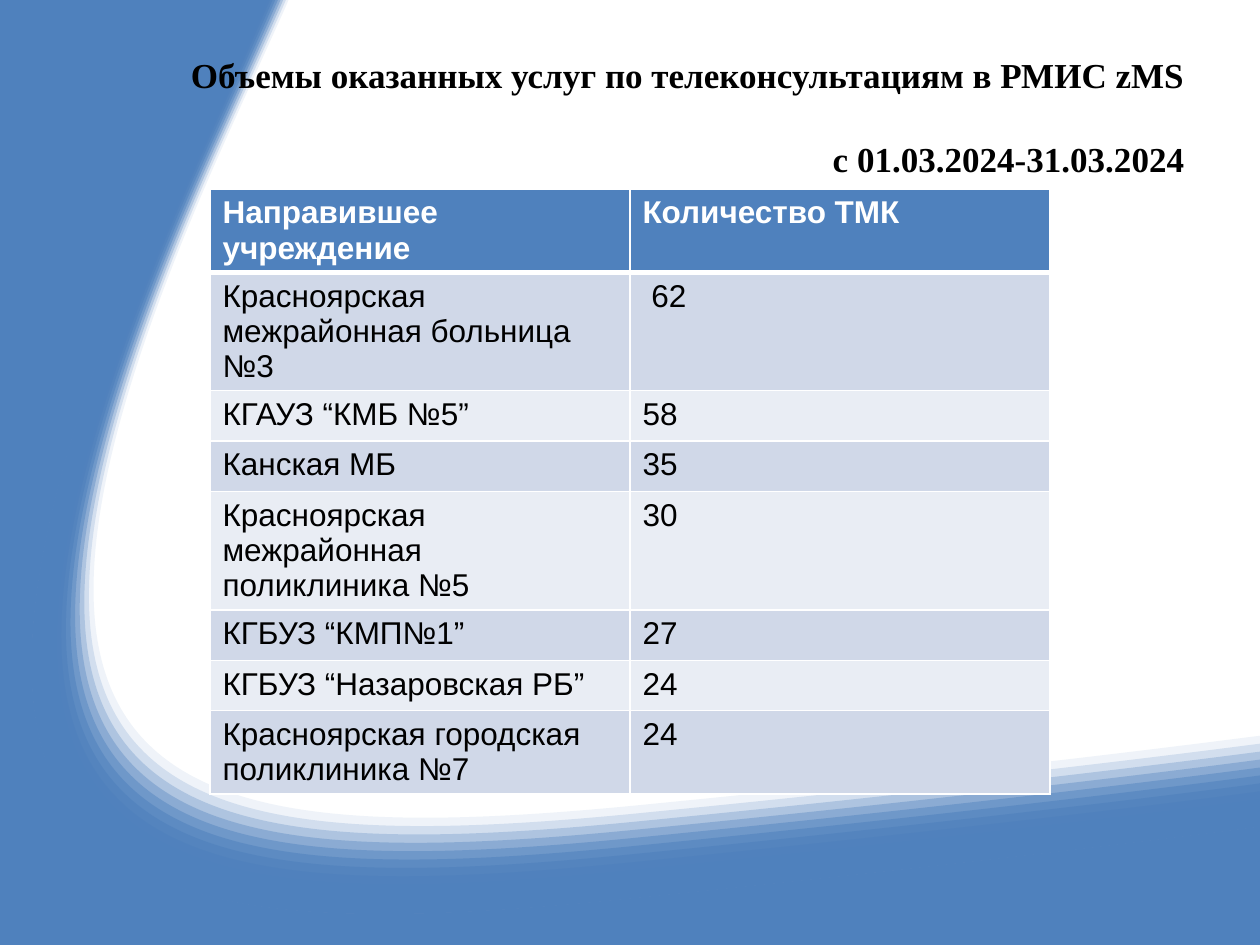
from dataclasses import dataclass
from lxml import etree
from pptx import Presentation
from pptx.dml.color import RGBColor
from pptx.enum.text import MSO_ANCHOR, PP_ALIGN
from pptx.oxml.ns import qn
from pptx.util import Pt


@dataclass(frozen=True)
class Theme:
    blue: str = "4F81BD"
    white: str = "FFFFFF"
    black: str = "000000"
    stripes: tuple = ("D0D8E8", "E9EDF4")
    title_font: str = "Times New Roman"
    body_font: str = "Arial"
    title_size: int = 20
    body_size: int = 18


WIDTH, HEIGHT = 720, 540
CORNERS = [(10, 7.5), (0, 7.5), (0, 0)]


def blend(outer, inner, share):
    return [tuple(a + (b - a) * share for a, b in zip(p, q))
            for p, q in zip(outer, inner)]


def add_step(path, tag, points):
    step = etree.SubElement(path, qn("a:" + tag))
    for x, y in points:
        etree.SubElement(step, qn("a:pt"), x=str(Pt(x * 72)), y=str(Pt(y * 72)))


def add_curves(path, edge):
    for start in range(1, len(edge), 3):
        add_step(path, "cubicBezTo", edge[start:start + 3])


class SlideBuilder:
    def __init__(self, slide, theme):
        self.slide, self.theme = slide, theme

    def style_text(self, paragraph, font, size, color, bold):
        for name, value in {"name": font, "size": Pt(size), "bold": bold}.items():
            setattr(paragraph.font, name, value)
        paragraph.font.color.rgb = RGBColor.from_string(color)

    def area(self, edge, inner_edge=None, opacity=1.0):
        """Blue area from a curved edge to an inner edge or the slide corners."""
        builder = self.slide.shapes.build_freeform(0, 0)
        builder.add_line_segments(
            [(Pt(WIDTH), 0), (Pt(WIDTH), Pt(HEIGHT)), (0, Pt(HEIGHT))], close=True)
        shape = builder.convert_to_shape()
        # Curved outline within the slide frame
        path = shape._element.spPr.find(".//" + qn("a:path"))
        for step in list(path):
            path.remove(step)
        add_step(path, "moveTo", edge[:1])
        add_curves(path, edge)
        for point in inner_edge[:1] if inner_edge else CORNERS:
            add_step(path, "lnTo", [point])
        if inner_edge:
            add_curves(path, inner_edge)
        etree.SubElement(path, qn("a:close"))

        shape.shadow.inherit = False
        shape.fill.solid()
        shape.fill.fore_color.rgb = RGBColor.from_string(self.theme.blue)
        shape.line.fill.background()
        if opacity < 1:
            color = shape._element.spPr.find(".//" + qn("a:srgbClr"))
            etree.SubElement(color, qn("a:alpha"), val=str(round(opacity * 100) * 1000))

    def title(self, lines, left, top, width, height, gap):
        heading = self.slide.shapes.title
        # Bring the title in front of the background
        self.slide.shapes._spTree.append(heading._element)
        place = {"left": left, "top": top, "width": width, "height": height}
        for name, value in place.items():
            setattr(heading, name, Pt(value))
        frame = heading.text_frame
        frame.word_wrap = True
        frame.vertical_anchor = MSO_ANCHOR.MIDDLE
        frame.text = "\n".join(lines)
        for index, paragraph in enumerate(frame.paragraphs):
            paragraph.alignment = PP_ALIGN.RIGHT
            paragraph.space_before = Pt(gap if index else 0)
            self.style_text(paragraph, self.theme.title_font, self.theme.title_size,
                            self.theme.black, True)

    def borders(self, cell, widths):
        properties = cell._tc.get_or_add_tcPr()
        for side, width in widths.items():
            line = etree.SubElement(properties, qn("a:ln" + side), w=str(Pt(width)))
            fill = etree.SubElement(line, qn("a:solidFill"))
            etree.SubElement(fill, qn("a:srgbClr"), val=self.theme.white)

    def table(self, rows, left, top, width, row_height):
        theme = self.theme
        grid = self.slide.shapes.add_table(
            len(rows), len(rows[0]), Pt(left), Pt(top), Pt(width),
            Pt(row_height * len(rows))).table
        for r, values in enumerate(rows):
            header = r == 0
            fill = theme.blue if header else theme.stripes[(r - 1) % 2]
            for c, value in enumerate(values):
                cell = grid.cell(r, c)
                self.borders(cell, {"L": 1, "R": 1, "T": 3 if r == 1 else 1,
                                    "B": 3 if header else 1})
                cell.fill.solid()
                cell.fill.fore_color.rgb = RGBColor.from_string(fill)
                cell.text = value
                self.style_text(cell.text_frame.paragraphs[0], theme.body_font,
                                theme.body_size,
                                theme.white if header else theme.black, header)


# Edge of the solid blue, from the top to the right side
BLUE_EDGE = [(1.99, 0), (1.99, 0), (1.8, 0.41), (1.47, 1.15), (-1.21, 7.12),
             (0.8, 7.55), (4.91, 7.14), (8.06, 6.82), (10, 6.56), (10, 6.56)]
# Edges of the palest and the deepest band, from the right side to the top
PALE_EDGE = [(10, 5.84), (9.98, 5.84), (8.14, 6.09), (5.18, 6.38), (1.21, 6.78),
             (-0.55, 6.32), (1.8, 1.09), (2.11, 0.4), (2.29, 0.01), (2.29, 0)]
DEEP_EDGE = [(10, 6.47), (9.74, 6.51), (7.86, 6.75), (4.98, 7.04), (0.92, 7.45),
             (-1.07, 7.03), (1.58, 1.14), (1.86, 0.52), (2.03, 0.11), (2.08, 0)]
BANDS = 11

TITLE = ["Объемы оказанных услуг по телеконсультациям в РМИС zMS",
         "с 01.03.2024-31.03.2024"]
CONSULTATIONS = [
    ("Направившее учреждение", "Количество ТМК"),
    ("Красноярская межрайонная больница №3", " 62"),
    ("КГАУЗ “КМБ №5”", "58"),
    ("Канская МБ", "35"),
    ("Красноярская межрайонная поликлиника №5", "30"),
    ("КГБУЗ “КМП№1”", "27"),
    ("КГБУЗ “Назаровская РБ”", "24"),
    ("Красноярская городская поликлиника №7", "24"),
]


def main():
    deck = Presentation()
    deck.slide_width, deck.slide_height = Pt(WIDTH), Pt(HEIGHT)
    page = SlideBuilder(deck.slides.add_slide(deck.slide_layouts[5]), Theme())

    # Background: solid blue, then bands that fade towards the white
    page.area(BLUE_EDGE)
    for band in range(BANDS):
        edge = blend(PALE_EDGE, DEEP_EDGE, band / (BANDS - 1))
        page.area(edge, BLUE_EDGE, (band + 1) / BANDS)

    # Title and table
    page.title(TITLE, left=93.6, top=21.6, width=590.4, height=90, gap=24)
    page.table(CONSULTATIONS, left=120, top=108, width=480, row_height=28.8)

    deck.save("out.pptx")


if __name__ == "__main__":
    main()
